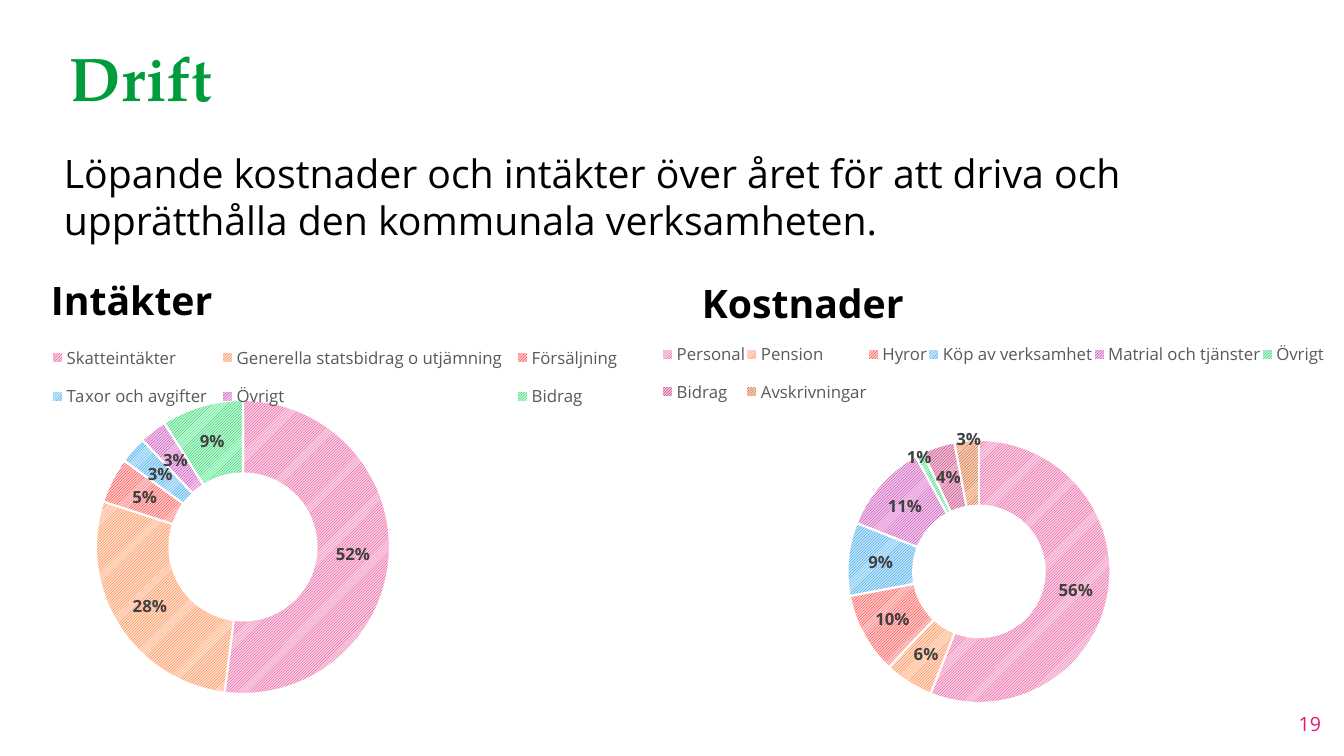
"""Build the Drift slide: headings and two doughnut charts of income and costs."""
from dataclasses import dataclass

from lxml import etree
from pptx import Presentation
from pptx.chart.data import CategoryChartData
from pptx.dml.color import RGBColor
from pptx.enum.chart import XL_CHART_TYPE, XL_LEGEND_POSITION
from pptx.enum.dml import MSO_PATTERN
from pptx.enum.text import MSO_ANCHOR, PP_ALIGN
from pptx.oxml.ns import qn
from pptx.slide import Slide
from pptx.util import Pt

DOUGHNUT = XL_CHART_TYPE.DOUGHNUT
TOP_LEGEND = XL_LEGEND_POSITION.TOP
HATCH = MSO_PATTERN.LIGHT_UPWARD_DIAGONAL
TOP, MIDDLE = MSO_ANCHOR.TOP, MSO_ANCHOR.MIDDLE
LEFT, RIGHT = PP_ALIGN.LEFT, PP_ALIGN.RIGHT
EMU_PER_PX = 914400 / 100.8


@dataclass(frozen=True)
class Theme:
    """Fonts, colours and type sizes of the slide."""
    font: str = "Open Sans"
    title_font: str = "TeX Gyre Pagella"
    black: str = "000000"
    white: str = "FFFFFF"
    green: str = "009B3A"
    pink: str = "E21776"
    legend: str = "595959"
    label: str = "404040"
    title_size: int = 44
    body_size: int = 28
    number_size: int = 14
    chart_size: int = 12
    hatches: tuple[tuple[str, str], ...] = (
        ("E21776", "FAD0E4"), ("FF5800", "FFDECC"), ("FF0000", "FFCCCC"),
        ("007AC9", "C1E7FF"), ("9B1889", "F6C6EF"), ("009B3A", "B8FFD3"),
        ("880E47", "F8BED9"), ("993500", "FFD0B8"),
    )


THEME = Theme()


@dataclass(frozen=True)
class Box:
    """A rectangle in px."""
    x: int
    y: int
    w: int
    h: int

    def emu(self) -> tuple[int, ...]:
        """Return left, top, width and height in EMU."""
        return tuple(px(v) for v in (self.x, self.y, self.w, self.h))


@dataclass(frozen=True)
class Label:
    """A text box with one paragraph."""
    text: str
    box: Box
    size: int = THEME.body_size
    color: str = THEME.black
    font: str = THEME.font
    bold: bool = False
    anchor: MSO_ANCHOR = TOP
    align: PP_ALIGN = LEFT


@dataclass(frozen=True)
class Ring:
    """A doughnut chart; plot, legend and label shifts are px within its box."""
    box: Box
    values: dict[str, float]
    plot: Box
    legend: Box
    hole: int
    percent: bool
    moved: dict[int, tuple[int, int]]


LABELS = (
    Label("Drift", Box(60, 14, 1210, 126), THEME.title_size, THEME.green,
          THEME.title_font, True, MIDDLE),
    Label("Löpande kostnader och intäkter över året för att driva och "
          "upprätthålla den kommunala verksamheten.", Box(54, 144, 1210, 178)),
    Label("19", Box(1029, 704, 302, 40), THEME.number_size, THEME.pink,
          anchor=MIDDLE, align=RIGHT),
    Label("Kostnader", Box(692, 274, 617, 72), bold=True),
    Label("Intäkter", Box(41, 271, 582, 178), bold=True),
)

RINGS = (
    Ring(Box(28, 331, 649, 371),
         {"Skatteintäkter": 0.52, "Generella statsbidrag o utjämning": 0.28,
          "Försäljning": 0.05, "Taxor och avgifter": 0.03, "Övrigt": 0.03,
          "Bidrag": 0.09},
         Box(61, 69, 308, 294), Box(15, 0, 584, 92), 70, False, {}),
    Ring(Box(623, 328, 706, 436),
         {"Personal": 56, "Pension": 6, "Hyror": 10, "Köp av verksamhet": 9,
          "Matrial och tjänster": 11, "Övrigt": 1, "Bidrag": 4,
          "Avskrivningar": 3},
         Box(213, 112, 286, 263), Box(38, 0, 665, 90), 50, True,
         {5: (-15, -26), 7: (-1, -34)}),
)


def px(n: int) -> int:
    """Turn px into EMU."""
    return round(n * EMU_PER_PX)


def style(font, size: int, color: str, bold: bool = False,
          name: str = THEME.font) -> None:
    """Set size, colour, weight and face of a font."""
    font.size, font.bold, font.name = Pt(size), bold, name
    font.color.rgb = RGBColor.from_string(color)


def manual_layout(**settings: object) -> etree._Element:
    """Return a chart layout element with the given settings."""
    layout = etree.Element(qn("c:layout"))
    manual = etree.SubElement(layout, qn("c:manualLayout"))
    for tag, value in settings.items():
        etree.SubElement(manual, qn(f"c:{tag}")).set("val", str(value))
    return layout


def place(part: etree._Element, index: int, inner: Box, outer: Box,
          **target: str) -> None:
    """Fix a chart part at a box inside the chart."""
    for old in part.findall(qn("c:layout")):
        part.remove(old)
    part.insert(index, manual_layout(
        **target, xMode="edge", yMode="edge",
        x=inner.x / outer.w, y=inner.y / outer.h,
        w=inner.w / outer.w, h=inner.h / outer.h))


def add_label(s: Slide, label: Label) -> None:
    """Add a text box."""
    tf = s.shapes.add_textbox(*label.box.emu()).text_frame
    tf.word_wrap, tf.vertical_anchor = True, label.anchor
    p = tf.paragraphs[0]
    p.text, p.alignment = label.text, label.align
    style(p.font, label.size, label.color, label.bold, label.font)


def add_ring(s: Slide, ring: Ring) -> None:
    """Add a doughnut chart with hatched slices."""
    data = CategoryChartData()
    data.categories = list(ring.values)
    data.add_series("Series 1", list(ring.values.values()))
    chart = s.shapes.add_chart(DOUGHNUT, *ring.box.emu(), data).chart
    chart.has_title = False
    style(chart.font, THEME.chart_size, THEME.black)
    chart.has_legend = True
    chart.legend.position = TOP_LEGEND
    chart.legend.include_in_layout = False
    style(chart.legend.font, THEME.chart_size, THEME.legend)

    plot = chart.plots[0]
    plot.vary_by_categories = True
    series = plot.series[0]
    labels = series.data_labels
    labels.show_value, labels.show_percentage = not ring.percent, ring.percent
    labels.number_format, labels.number_format_is_linked = "0%", False
    style(labels.font, THEME.chart_size, THEME.label, True)

    for i, (fore, back) in zip(range(len(ring.values)), THEME.hatches):
        fmt = series.points[i].format
        fmt.fill.patterned()
        fmt.fill.pattern = HATCH
        fmt.fill.fore_color.rgb = RGBColor.from_string(fore)
        fmt.fill.back_color.rgb = RGBColor.from_string(back)
        fmt.line.color.rgb = RGBColor.from_string(THEME.white)
        fmt.line.width = Pt(1.5)

    for i in ring.moved:
        style(series.points[i].data_label.font, THEME.chart_size, THEME.label, True)
    root = chart.element
    for dlbl in root.iter(qn("c:dLbl")):
        idx = dlbl.find(qn("c:idx"))
        dx, dy = ring.moved[int(idx.get("val"))]
        idx.addnext(manual_layout(x=dx / ring.box.w, y=dy / ring.box.h))
        dlbl.find(qn("c:showVal")).set("val", "0")
        dlbl.find(qn("c:showPercent")).set("val", "1")

    next(root.iter(qn("c:holeSize"))).set("val", str(ring.hole))
    place(next(root.iter(qn("c:plotArea"))), 0, ring.plot, ring.box,
          layoutTarget="inner")
    place(next(root.iter(qn("c:legend"))), 1, ring.legend, ring.box)


def main() -> None:
    """Build and save the slide."""
    prs = Presentation()
    prs.slide_width, prs.slide_height = px(1344), px(756)
    s = prs.slides.add_slide(prs.slide_layouts[6])
    for label in LABELS:
        add_label(s, label)
    for ring in RINGS:
        add_ring(s, ring)
    prs.save("out.pptx")


if __name__ == "__main__":
    main()
